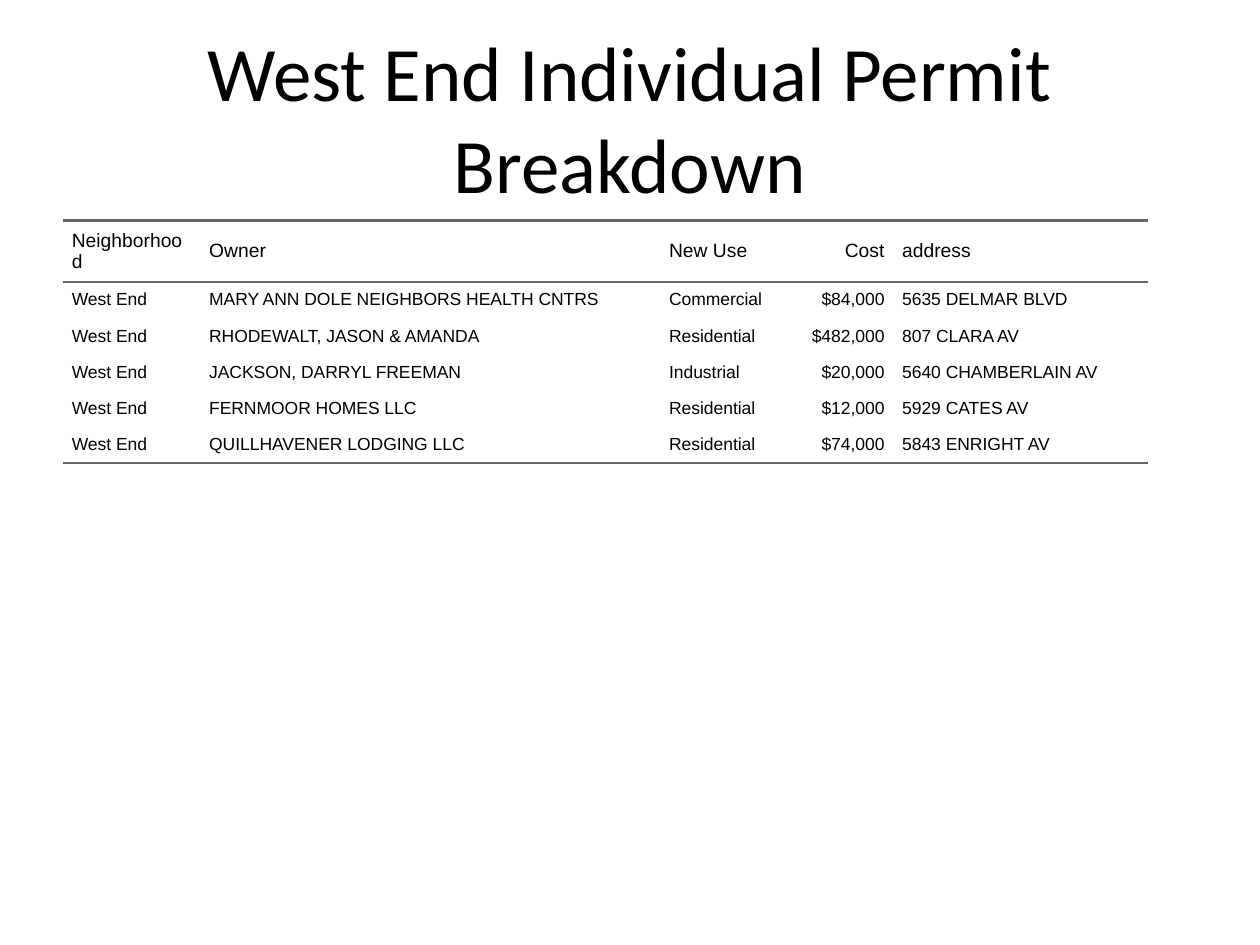
from dataclasses import dataclass

from lxml.etree import SubElement
from pptx import Presentation
from pptx.dml.color import RGBColor
from pptx.enum.text import MSO_ANCHOR, PP_ALIGN
from pptx.oxml.ns import qn
from pptx.util import Inches, Pt


@dataclass(frozen=True)
class Theme:
    text: str = "000000"
    rule: str = "666666"
    title_font: str = "Calibri"
    table_font: str = "Arial"
    title_size: int = 44
    header_size: int = 11
    body_size: int = 10
    rule_width: float = 1.5


THEME = Theme()
COL_WIDTHS = [1.09, 3.65, 1.1, 0.75, 2.02]
COST_COL = 3
HEADERS = ["Neighborhood", "Owner", "New Use", "Cost", "address"]
PERMITS = [
    ("MARY ANN DOLE NEIGHBORS HEALTH CNTRS", "Commercial", "$84,000", "5635 DELMAR BLVD"),
    ("RHODEWALT, JASON & AMANDA", "Residential", "$482,000", "807 CLARA AV"),
    ("JACKSON, DARRYL FREEMAN", "Industrial", "$20,000", "5640 CHAMBERLAIN AV"),
    ("FERNMOOR HOMES LLC", "Residential", "$12,000", "5929 CATES AV"),
    ("QUILLHAVENER LODGING LLC", "Residential", "$74,000", "5843 ENRIGHT AV"),
]


def apply(target, formats):
    for name, value in formats.items():
        setattr(target, name, value)


def write(p, text, font, size, align):
    p.alignment = align
    r = p.add_run()
    r.text = text
    apply(r.font, {"name": font, "size": Pt(size), "bold": False})
    r.font.color.rgb = RGBColor.from_string(THEME.text)


def add_title(s, text):
    sp = s.shapes.add_textbox(Inches(0.5), Inches(0.3), Inches(9), Inches(1.25))
    tf = sp.text_frame
    apply(tf, {"word_wrap": True, "vertical_anchor": MSO_ANCHOR.MIDDLE})
    write(tf.paragraphs[0], text, THEME.title_font, THEME.title_size, PP_ALIGN.CENTER)


def add_rules(cell, sides):
    tcPr = cell._tc.get_or_add_tcPr()
    for i, side in enumerate(sides):
        ln = SubElement(tcPr, qn(f"a:{side}"), w=str(Pt(THEME.rule_width)))
        fill = SubElement(ln, qn("a:solidFill"))
        SubElement(fill, qn("a:srgbClr"), val=THEME.rule)
        tcPr.insert(i, ln)


def fill_cell(cell, text, size, align):
    apply(cell, {
        "margin_left": 0, "margin_right": 0,
        "margin_top": Inches(0.06), "margin_bottom": Inches(0.06),
        "vertical_anchor": MSO_ANCHOR.MIDDLE,
    })
    cell.fill.background()
    p = cell.text_frame.paragraphs[0]
    apply(p, {"space_before": Pt(5), "space_after": Pt(5)})
    write(p, text, THEME.table_font, size, align)
    pPr = p._p.get_or_add_pPr()
    for name in ("marL", "marR"):
        pPr.set(name, str(Inches(0.07)))
    pPr.set("indent", "0")


def add_permit_table(s):
    rows = [HEADERS] + [("West End", *permit) for permit in PERMITS]
    table = s.shapes.add_table(
        len(rows), len(HEADERS), Inches(0.5), Inches(1.75),
        Inches(sum(COL_WIDTHS)), Inches(0.25 * len(rows)),
    ).table
    apply(table, {"first_row": False, "horz_banding": False})
    table._tbl.tblPr.find(qn("a:tableStyleId")).text = "{2D5ABB26-0587-4C30-8999-92F81FD0307C}"
    for col, width in zip(table.columns, COL_WIDTHS):
        col.width = Inches(width)
    rules = {0: ("lnT", "lnB"), len(rows) - 1: ("lnB",)}
    for i, row in enumerate(rows):
        size = THEME.body_size if i else THEME.header_size
        for j, text in enumerate(row):
            cell = table.cell(i, j)
            align = PP_ALIGN.RIGHT if j == COST_COL else PP_ALIGN.LEFT
            fill_cell(cell, text, size, align)
            add_rules(cell, rules.get(i, ()))


def main():
    prs = Presentation()
    apply(prs, {"slide_width": Inches(10), "slide_height": Inches(7.5)})
    s = prs.slides.add_slide(prs.slide_layouts[6])
    add_title(s, "West End Individual Permit Breakdown")
    add_permit_table(s)
    prs.save("out.pptx")


if __name__ == "__main__":
    main()
